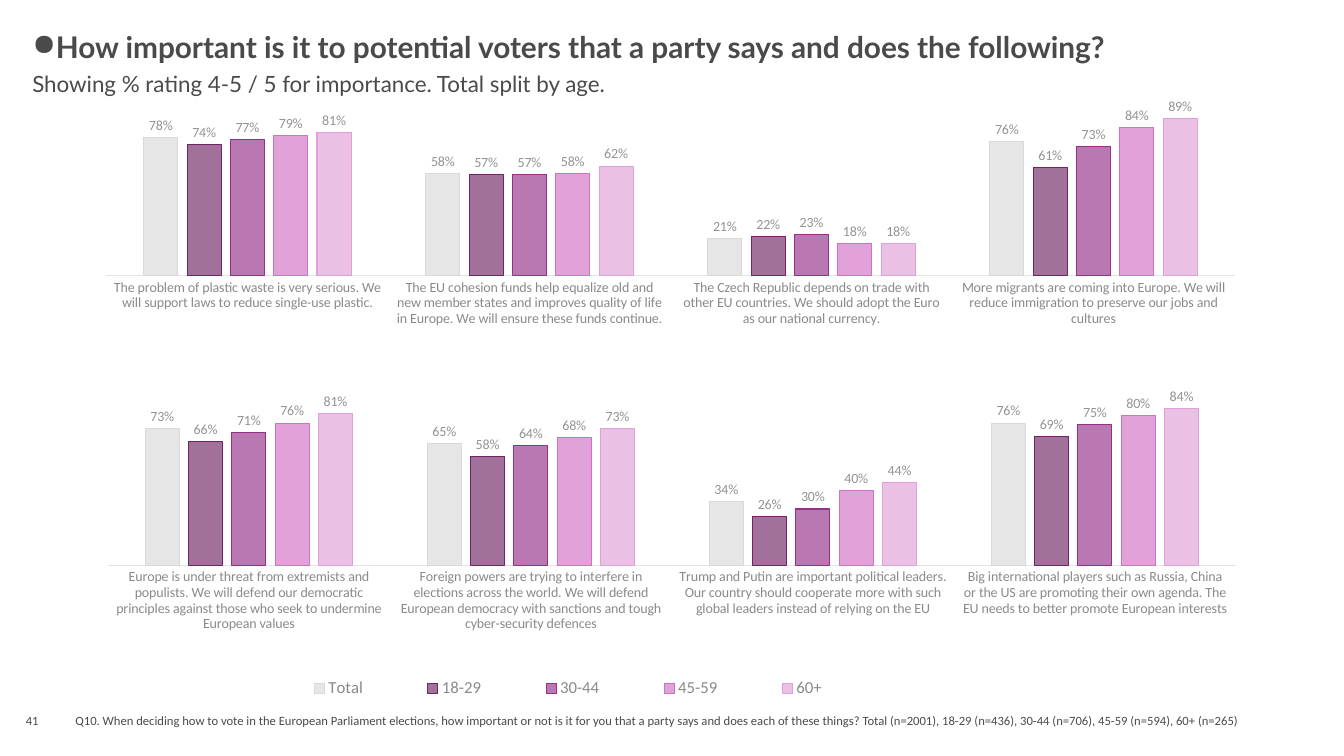
import pptx
import pptx.chart.data
import pptx.dml.color
import pptx.enum.chart
import pptx.enum.text
import pptx.oxml
import pptx.oxml.ns
import pptx.util

Inches = pptx.util.Inches
Pt = pptx.util.Pt

AGES = ["Total", "18-29", "30-44", "45-59", "60+"]
FILLS = ["D9D9D9", "702466", "953088", "D171C5", "E0A0D8"]
DARK, GREY, PALE, RULE = "4A4A49", "8A8A88", "939391", "E4E4E4"

# One row per statement, one value per age group
TOP = {
    "The problem of plastic waste is very serious. We will support laws to "
    "reduce single-use plastic.": (78, 74, 77, 79, 81),
    "The EU cohesion funds help equalize old and new member states and improves "
    "quality of life in Europe. We will ensure these funds continue.":
        (58, 57, 57, 58, 62),
    "The Czech Republic depends on trade with other EU countries. We should "
    "adopt the Euro as our national currency.": (21, 22, 23, 18, 18),
    "More migrants are coming into Europe. We will reduce immigration to "
    "preserve our jobs and cultures": (76, 61, 73, 84, 89),
}
LOW = {
    "Europe is under threat from extremists and populists. We will defend our "
    "democratic principles against those who seek to undermine European values":
        (73, 66, 71, 76, 81),
    "Foreign powers are trying to interfere in elections across the world. We "
    "will defend European democracy with sanctions and tough cyber-security "
    "defences": (65, 58, 64, 68, 73),
    "Trump and Putin are important political leaders. Our country should "
    "cooperate more with such global leaders instead of relying on the EU":
        (34, 26, 30, 40, 44),
    "Big international players such as Russia, China or the US are promoting "
    "their own agenda. The EU needs to better promote European interests":
        (76, 69, 75, 80, 84),
}


def color(code):
    return pptx.dml.color.RGBColor.from_string(code)


def style(font, size, code, name="Calibri", bold=False):
    font.name, font.size, font.bold = name, Pt(size), bold
    font.color.rgb = color(code)


def place(shape, box):
    shape.left, shape.top, shape.width, shape.height = map(Inches, box)


def add_title(slide, text, box):
    title = slide.shapes.title
    place(title, box)
    frame = title.text_frame
    frame.text = text
    frame.vertical_anchor = pptx.enum.text.MSO_ANCHOR.TOP
    frame.auto_size = pptx.enum.text.MSO_AUTO_SIZE.NONE
    para = frame.paragraphs[0]
    para.alignment = pptx.enum.text.PP_ALIGN.LEFT
    para.line_spacing = 0.8
    # Hanging round bullet
    props = para._p.get_or_add_pPr()
    props.set("marL", "0")
    props.set("indent", str(-Inches(0.3)))
    mark = pptx.oxml.parse_xml(
        f'<a:buChar {pptx.oxml.ns.nsdecls("a")} char="●"/>')
    props.append(mark)
    style(para.font, 21.3, "4A4A4A", "Lato", True)


def add_text(slide, text, box, size, name="Calibri", side=0.1, mid=True,
             align=pptx.enum.text.PP_ALIGN.LEFT):
    frame = slide.shapes.add_textbox(*map(Inches, box)).text_frame
    frame.word_wrap = True
    frame.margin_left = frame.margin_right = Inches(side)
    anchor = pptx.enum.text.MSO_ANCHOR
    frame.vertical_anchor = anchor.MIDDLE if mid else anchor.TOP
    frame.text = text
    para = frame.paragraphs[0]
    para.alignment = align
    style(para.font, size, DARK, name)


def set_layout(parent, box, inner=False):
    """Fix the place of a chart part, in shares of the chart."""
    for old in parent.findall(pptx.oxml.ns.qn("c:layout")):
        parent.remove(old)
    target = '<c:layoutTarget val="inner"/>' if inner else ""
    modes = '<c:xMode val="edge"/><c:yMode val="edge"/>'
    sizes = "".join(f'<c:{k} val="{v}"/>' for k, v in zip("xywh", box))
    layout = pptx.oxml.parse_xml(
        f'<c:layout {pptx.oxml.ns.nsdecls("c")}><c:manualLayout>'
        f'{target}{modes}{sizes}</c:manualLayout></c:layout>')
    parent.insert(0 if inner else 1, layout)


def paint(series, code):
    look = series.format
    look.fill.solid()
    look.fill.fore_color.rgb = color(code)
    look.line.color.rgb = color(code)
    look.line.width = Pt(0.75)
    # Fill at 65% opacity
    tint = series._element.spPr.find(
        pptx.oxml.ns.qn("a:solidFill"))[0]
    tint.append(pptx.oxml.parse_xml(
        f'<a:alpha {pptx.oxml.ns.nsdecls("a")} val="65000"/>'))
    labels = series.data_labels
    labels.show_value = True
    labels.number_format = '0"%"'
    labels.number_format_is_linked = False
    labels.position = pptx.enum.chart.XL_LABEL_POSITION.OUTSIDE_END
    style(labels.font, 10, PALE)


def add_bars(slide, rows, box, plot_box):
    data = pptx.chart.data.CategoryChartData(number_format="0")
    data.categories = list(rows)
    for name, vals in zip(AGES, zip(*rows.values())):
        data.add_series(name, vals)
    kind = pptx.enum.chart.XL_CHART_TYPE.COLUMN_CLUSTERED
    chart = slide.shapes.add_chart(kind, *map(Inches, box), data).chart
    chart.has_title = False
    chart.has_legend = False
    style(chart.font, 10, DARK, "Lato")

    plot = chart.plots[0]
    plot.gap_width, plot.overlap = 219, -27
    plot.vary_by_categories = False
    for series, code in zip(plot.series, FILLS):
        paint(series, code)

    scale = chart.value_axis
    scale.minimum_scale, scale.maximum_scale = 0, 100
    scale.has_major_gridlines = False
    scale.visible = False
    axis = chart.category_axis
    axis.major_tick_mark = pptx.enum.chart.XL_TICK_MARK.NONE
    axis.format.line.color.rgb = color(RULE)
    axis.format.line.width = Pt(0.75)
    style(axis.tick_labels.font, 10, GREY)
    set_layout(chart._chartSpace.chart.plotArea, plot_box, inner=True)
    return chart


def add_legend(chart, box):
    chart.has_legend = True
    legend = chart.legend
    legend.position = pptx.enum.chart.XL_LEGEND_POSITION.BOTTOM
    legend.include_in_layout = False
    style(legend.font, 12, GREY)
    set_layout(legend._element, box)


def main():
    deck = pptx.Presentation()
    deck.slide_width, deck.slide_height = Inches(13.33), Inches(7.5)
    slide = deck.slides.add_slide(deck.slide_layouts[5])

    # Charts
    add_bars(slide, TOP, (0.86, 0.6, 11.5, 3.15), (0.017, 0.121, 0.973, 0.557))
    low = add_bars(slide, LOW, (0.92, 3.56, 11.5, 3.44),
                   (0.013, 0.056, 0.973, 0.539))
    add_legend(low, (0.14, 0.91, 0.54, 0.08))

    # Headings
    add_title(slide, "How important is it to potential voters that a party "
              "says and does the following?", (0.22, 0.3, 12.48, 0.94))
    add_text(slide, "Showing % rating 4-5 / 5 for importance. Total split by "
             "age.", (0.32, 0.65, 7.91, 0.37), 16, "Lato", side=0, mid=False)

    # Footer
    add_text(slide, "41", (0.1, 6.95, 0.44, 0.4), 9,
             align=pptx.enum.text.PP_ALIGN.CENTER)
    add_text(slide, "Q10. When deciding how to vote in the European Parliament "
             "elections, how important or not is it for you that a party says "
             "and does each of these things? Total (n=2001), 18-29 (n=436), "
             "30-44 (n=706), 45-59 (n=594), 60+ (n=265)",
             (0.65, 6.95, 12.05, 0.4), 9)
    deck.save("out.pptx")


if __name__ == "__main__":
    main()
